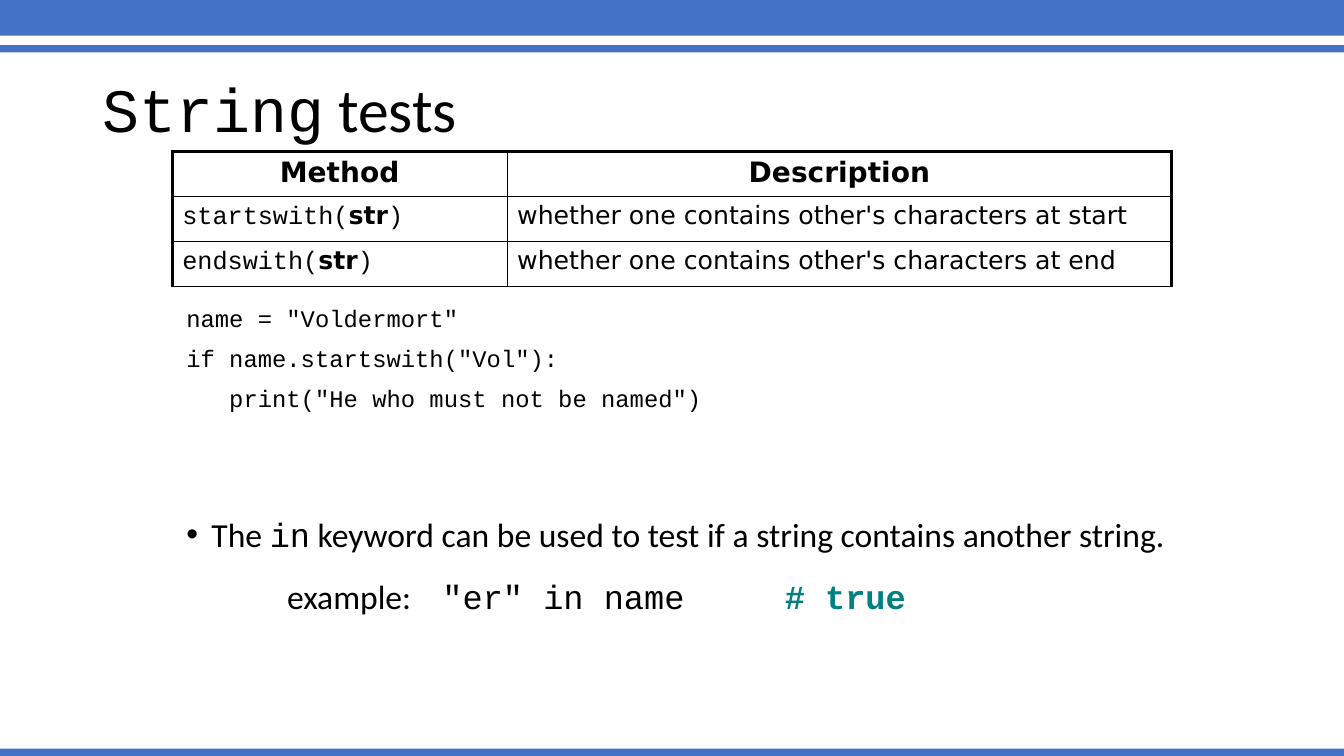
from lxml.etree import SubElement
from pptx import Presentation
from pptx.dml.color import RGBColor
from pptx.enum.shapes import MSO_SHAPE
from pptx.enum.text import MSO_ANCHOR, MSO_AUTO_SIZE, PP_ALIGN
from pptx.oxml.ns import qn
from pptx.util import Pt

PX = 9525  # EMU in one px, 96 px to the inch
WIDTH, HEIGHT = 1280, 720
BLUE = RGBColor(0x44, 0x72, 0xC4)
BLACK = RGBColor(0, 0, 0)
WHITE = RGBColor(0xFF, 0xFF, 0xFF)
TEAL = RGBColor(0, 0x80, 0x80)
BODY, CODE, TABLE = "Calibri", "Courier New", "DejaVu Sans"


def emu(*lengths):
    return [round(length * PX) for length in lengths]


def write(para, text, font=BODY, size=24, color=BLACK, bold=False):
    """Add one formatted span to a paragraph."""
    span = para.add_run()
    span.text = text
    span.font.name = font
    span.font.size = Pt(size)
    span.font.bold = bold
    span.font.color.rgb = color


def add_paragraphs(frame, count, line_spacing):
    """Return evenly spaced paragraphs of a wrapping text frame."""
    frame.word_wrap = True
    paras = [frame.paragraphs[0]] + [frame.add_paragraph() for _ in range(count - 1)]
    for para in paras:
        para.line_spacing = line_spacing
        para.space_before = Pt(10)
    return paras


def add_bands(page):
    # Blue bands across the top and the bottom
    for top, height in ((0, 34), (43, 7), (HEIGHT - 7, 7)):
        band = page.shapes.add_shape(MSO_SHAPE.RECTANGLE, *emu(0, top, WIDTH, height))
        band.shadow.inherit = False
        band.fill.solid()
        band.fill.fore_color.rgb = BLUE
        band.line.fill.background()


def add_title(page, box):
    title = page.shapes.title
    title.left, title.top, title.width, title.height = emu(*box)
    frame = title.text_frame
    frame.auto_size = MSO_AUTO_SIZE.NONE
    frame.vertical_anchor = MSO_ANCHOR.MIDDLE
    para = frame.paragraphs[0]
    para.alignment = PP_ALIGN.LEFT
    para.line_spacing = 0.9
    write(para, "String", font=CODE, size=44)
    write(para, " tests", size=44)


def set_borders(cell, widths):
    """Draw the left, right, top and bottom borders of a cell."""
    properties = cell._tc.get_or_add_tcPr()
    for index, (side, width) in enumerate(zip(("lnL", "lnR", "lnT", "lnB"), widths)):
        line = properties.makeelement(qn(f"a:{side}"), {"w": str(Pt(width))})
        fill = SubElement(line, qn("a:solidFill"))
        SubElement(fill, qn("a:srgbClr"), val=str(BLACK))
        properties.insert(index, line)


def add_method_table(page, box, first_width):
    methods = [("startswith", "whether one contains other's characters at start"),
               ("endswith", "whether one contains other's characters at end")]
    table = page.shapes.add_table(len(methods) + 1, 2, *emu(*box)).table
    table.first_row = table.horz_banding = False
    table.columns[0].width, table.columns[1].width = emu(first_width, box[2] - first_width)

    # Header
    for column, heading in enumerate(("Method", "Description")):
        para = table.cell(0, column).text_frame.paragraphs[0]
        para.alignment = PP_ALIGN.CENTER
        write(para, heading, font=TABLE, size=20, bold=True)

    # Methods and their descriptions
    for row, (method, description) in enumerate(methods, start=1):
        para = table.cell(row, 0).text_frame.paragraphs[0]
        write(para, f"{method}(", font=CODE, size=18)
        write(para, "str", font=TABLE, size=18, bold=True)
        write(para, ")", font=CODE, size=18)
        write(table.cell(row, 1).text_frame.paragraphs[0], description, font=TABLE, size=18)

    # Thin grid inside a thick frame
    for row in range(len(methods) + 1):
        for column in range(2):
            cell = table.cell(row, column)
            cell.fill.solid()
            cell.fill.fore_color.rgb = WHITE
            left, right = (2.25, 1) if column == 0 else (1, 2.25)
            set_borders(cell, (left, right, 2.25 if row == 0 else 1, 1))


def add_code(page, box):
    lines = ['name = "Voldermort"',
             'if name.startswith("Vol"):',
             '   print("He who must not be named")']
    frame = page.shapes.add_textbox(*emu(*box)).text_frame
    for para, line in zip(add_paragraphs(frame, len(lines), 0.9), lines):
        write(para, line, font=CODE, size=17)


def add_keyword_note(page, box, indent, tabs):
    frame = page.shapes.add_textbox(*emu(*box)).text_frame
    bullet, example = add_paragraphs(frame, 2, 1.2)

    # Bulleted statement
    properties = bullet._p.get_or_add_pPr()
    properties.set("marL", str(indent * PX))
    properties.set("indent", str(-indent * PX))
    SubElement(properties, qn("a:buFont"), typeface="Arial")
    SubElement(properties, qn("a:buChar"), char="•")
    write(bullet, "The ")
    write(bullet, "in", font=CODE)
    write(bullet, " keyword can be used to test if a string contains another string.")

    # Example set out on tab stops
    stops = SubElement(example._p.get_or_add_pPr(), qn("a:tabLst"))
    for tab in tabs:
        SubElement(stops, qn("a:tab"), pos=str(tab * PX), algn="l")
    write(example, "\texample:\t")
    write(example, '"er" in name\t', font=CODE)
    write(example, "# true", font=CODE, color=TEAL, bold=True)


def main():
    deck = Presentation()
    deck.slide_width, deck.slide_height = emu(WIDTH, HEIGHT)
    page = deck.slides.add_slide(deck.slide_layouts[5])
    add_bands(page)
    add_title(page, (88, 38, 1104, 139))
    add_code(page, (168, 288, 944, 137))
    add_method_table(page, (164, 144, 952, 129), first_width=319)
    add_keyword_note(page, (168, 477, 981, 137), indent=24, tabs=(96, 244, 570))
    deck.save("out.pptx")


if __name__ == "__main__":
    main()
